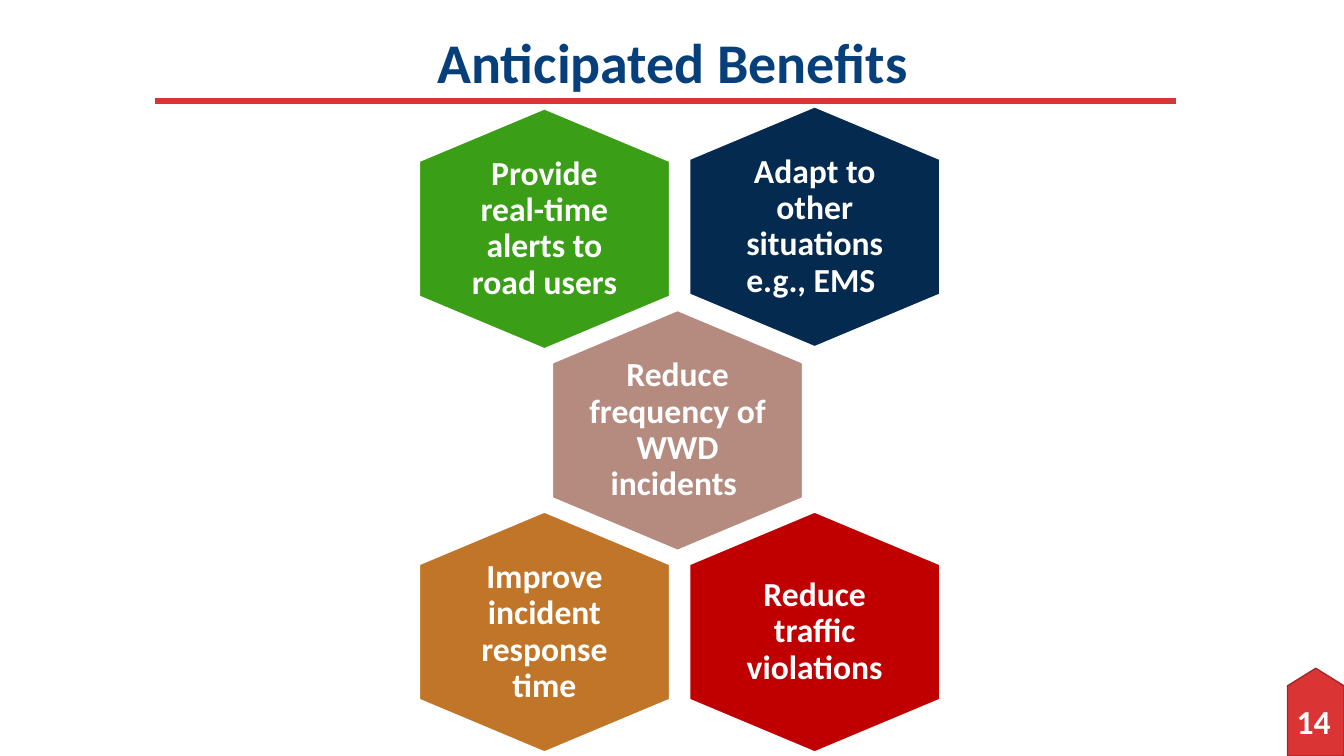
from dataclasses import dataclass

from lxml import etree
from pptx import Presentation
from pptx.dml.color import RGBColor
from pptx.enum.shapes import MSO_CONNECTOR, MSO_SHAPE
from pptx.enum.text import MSO_ANCHOR, PP_ALIGN
from pptx.oxml.ns import qn
from pptx.shapes.autoshape import Shape
from pptx.slide import Slide
from pptx.util import Inches, Pt

CENTER = PP_ALIGN.CENTER
MIDDLE = MSO_ANCHOR.MIDDLE
STRAIGHT = MSO_CONNECTOR.STRAIGHT
PAGE_TAB = MSO_SHAPE.FLOWCHART_OFFPAGE_CONNECTOR


@dataclass(frozen=True)
class Theme:
    font: str = "Calibri"
    title_size: int = 40
    body_size: int = 24
    title: str = "063F79"
    accent: str = "DB3434"
    accent_dark: str = "A22626"
    white: str = "FFFFFF"
    green: str = "3A9E16"
    navy: str = "042A50"
    rose: str = "B58B80"
    ochre: str = "C17529"
    red: str = "C00000"


@dataclass(frozen=True)
class Benefit:
    text: str
    left: float
    top: float
    color: str
    inset: float


THEME = Theme()
HEX_W, HEX_H, HEX_SHOULDER = 2.48, 2.38, 0.52
LEFT_COL, MID_COL, RIGHT_COL = 4.16, 5.48, 6.84
WIDE_INSET, NARROW_INSET = 0.4, 0.32
BENEFITS = [
    Benefit("Provide real-time alerts to road users", LEFT_COL, 1.08, THEME.green, WIDE_INSET),
    Benefit("Reduce frequency of WWD incidents ", MID_COL, 3.08, THEME.rose, NARROW_INSET),
    Benefit("Adapt to other situations e.g., EMS ", RIGHT_COL, 1.06, THEME.navy, WIDE_INSET),
    Benefit("Improve incident response time", LEFT_COL, 5.08, THEME.ochre, WIDE_INSET),
    Benefit("Reduce traffic violations", RIGHT_COL, 5.08, THEME.red, NARROW_INSET),
]


def rgb(color: str) -> RGBColor:
    return RGBColor.from_string(color)


def set_text(sp: Shape, text: str, size: int, color: str, spacing: float = 1.0) -> None:
    tf = sp.text_frame
    tf.word_wrap = True
    tf.vertical_anchor = MIDDLE
    p = tf.paragraphs[0]
    p.text = text
    p.alignment = CENTER
    p.line_spacing = spacing
    p.font.name = THEME.font
    p.font.size = Pt(size)
    p.font.bold = True
    p.font.color.rgb = rgb(color)


def paint(sp: Shape, fill: str, line: str) -> None:
    sp.shadow.inherit = False
    sp.fill.solid()
    sp.fill.fore_color.rgb = rgb(fill)
    sp.line.color.rgb = rgb(line)
    sp.line.width = Pt(1)


def add_title(s: Slide, text: str) -> None:
    sp = s.shapes.title
    sp.left, sp.top = Inches(0.92), Inches(0)
    sp.width, sp.height = Inches(11.5), Inches(1.29)
    set_text(sp, text, THEME.title_size, THEME.title, 0.9)


def add_rule(s: Slide) -> None:
    rule = s.shapes.add_connector(STRAIGHT, Inches(1.54), Inches(1), Inches(11.66), Inches(1))
    rule.line.color.rgb = rgb(THEME.accent)
    rule.line.width = Pt(4.5)
    etree.SubElement(rule._element.spPr, qn("a:effectLst"))


def add_page_number(s: Slide, number: str) -> None:
    tab = s.shapes.add_shape(PAGE_TAB, Inches(12.77), Inches(6.63), Inches(0.56), Inches(0.87))
    tab.rotation = 180
    paint(tab, THEME.accent, THEME.accent_dark)
    box = s.shapes.add_textbox(Inches(12.73), Inches(6.95), Inches(0.6), Inches(0.4))
    set_text(box, number, THEME.body_size, THEME.white)


def add_hexagon(s: Slide, benefit: Benefit) -> None:
    x, y = benefit.left, benefit.top
    mid, right, bottom = x + HEX_W / 2, x + HEX_W, y + HEX_H
    upper, lower = y + HEX_SHOULDER, bottom - HEX_SHOULDER
    corners = [(right, upper), (right, lower), (mid, bottom), (x, lower), (x, upper)]
    outline = s.shapes.build_freeform(Inches(mid), Inches(y))
    outline.add_line_segments([(Inches(cx), Inches(cy)) for cx, cy in corners], close=True)
    sp = outline.convert_to_shape()
    paint(sp, benefit.color, THEME.white)
    set_text(sp, benefit.text, THEME.body_size, THEME.white, 0.9)
    tf = sp.text_frame
    tf.margin_left = tf.margin_right = Inches(benefit.inset)
    tf.margin_top = tf.margin_bottom = Inches(benefit.inset + 0.05)


def main() -> None:
    prs = Presentation()
    prs.slide_width, prs.slide_height = Inches(13.33), Inches(7.5)
    s = prs.slides.add_slide(prs.slide_layouts[5])
    add_page_number(s, "14")
    add_rule(s)
    add_title(s, "Anticipated Benefits")
    for benefit in BENEFITS:
        add_hexagon(s, benefit)
    prs.save("out.pptx")


if __name__ == "__main__":
    main()
